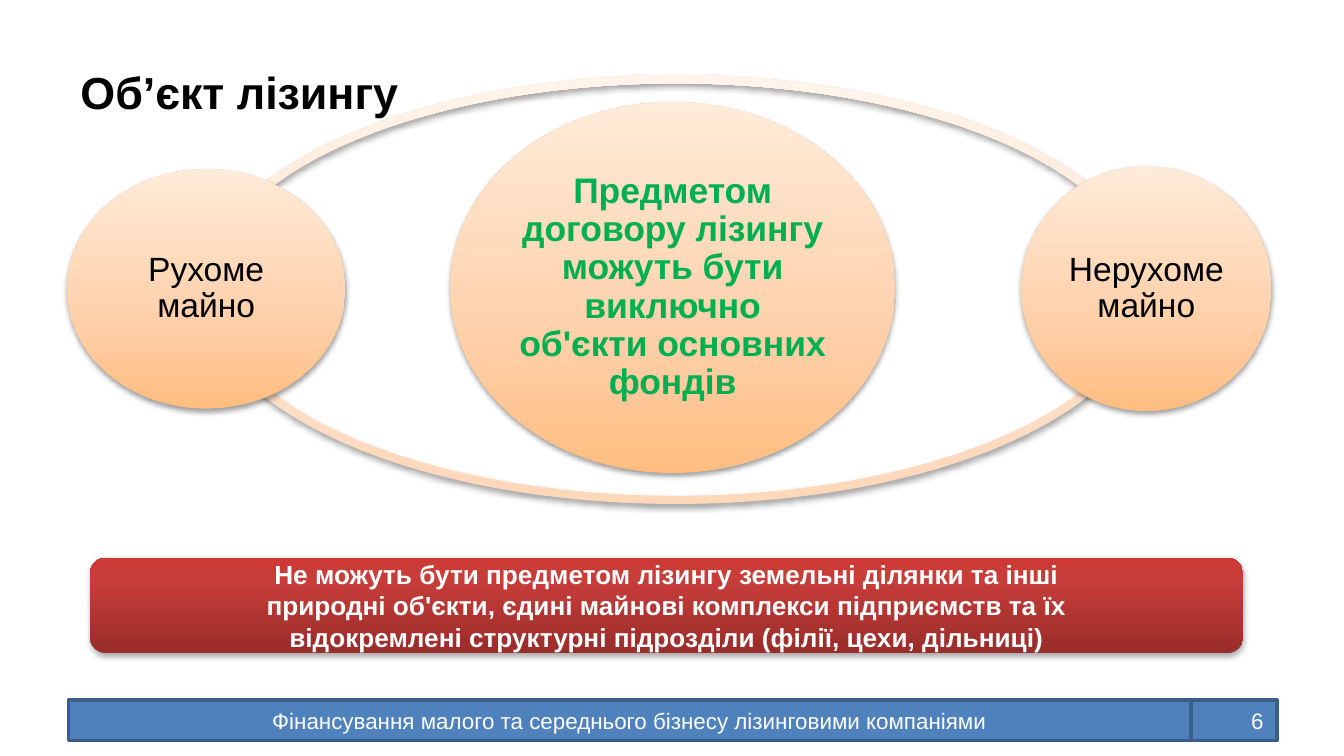
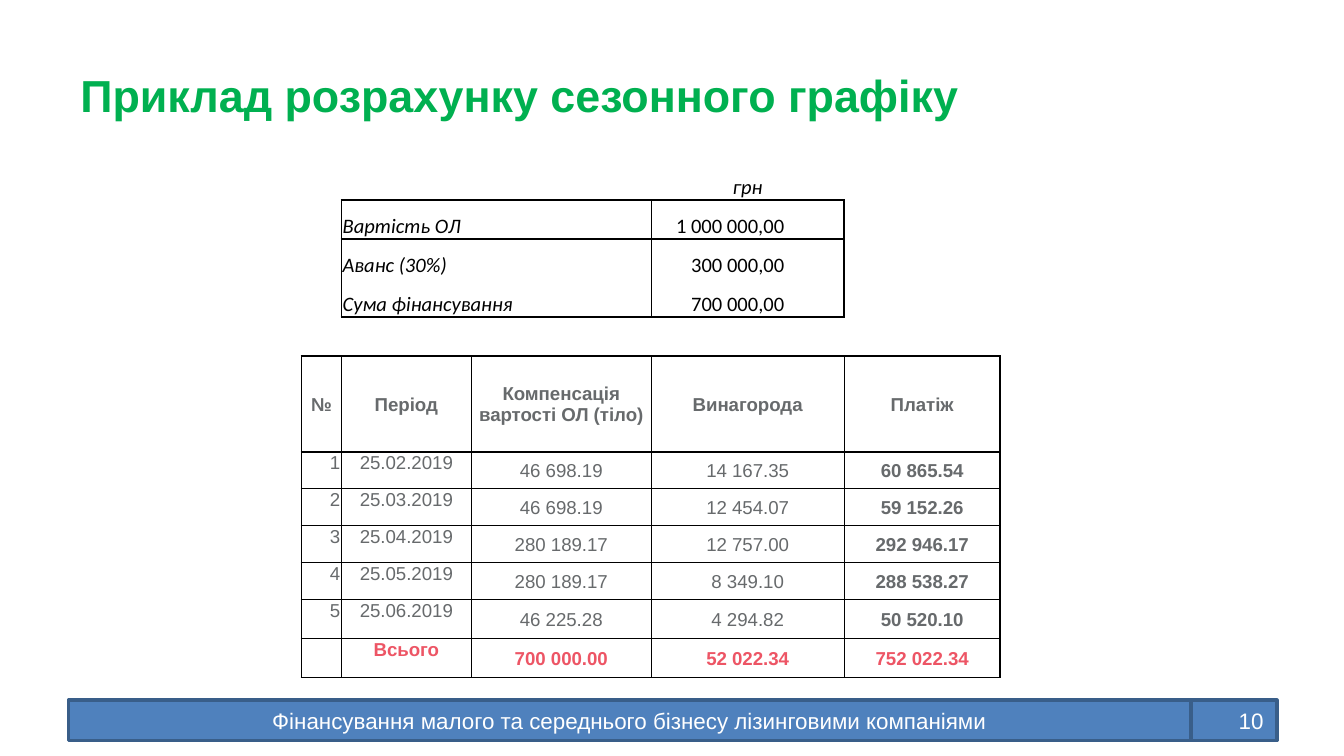
from lxml import etree
from pptx import Presentation
from pptx.dml.color import RGBColor
from pptx.enum import shapes, text
from pptx.oxml.ns import qn
from pptx.util import Pt

# Content
FOOTER = "Фінансування малого та середнього бізнесу лізинговими компаніями"
OBJECT_TITLE = "Об’єкт лізингу"
SCHEDULE_TITLE = "Приклад розрахунку сезонного графіку"
EXCLUSIONS = "\v".join([
    "Не можуть бути предметом лізингу земельні ділянки та інші",
    "природні об'єкти, єдині майнові комплекси підприємств та їх",
    "відокремлені структурні підрозділи (філії, цехи, дільниці)",
])
SUBJECT = "Предметом договору лізингу можуть бути виключно об'єкти основних фондів"
CURRENCY = "грн"
SUMMARY = [
    ("Вартість ОЛ", "1 000 000,00"),
    ("Аванс (30%)", "300 000,00"),
    ("Сума фінансування", "700 000,00"),
]
PAYMENTS = [
    ("№", "Період", "Компенсація вартості ОЛ (тіло)", "Винагорода", "Платіж"),
    ("1", "25.02.2019", "46 698.19", "14 167.35", "60 865.54"),
    ("2", "25.03.2019", "46 698.19", "12 454.07", "59 152.26"),
    ("3", "25.04.2019", "280 189.17", "12 757.00", "292 946.17"),
    ("4", "25.05.2019", "280 189.17", "8 349.10", "288 538.27"),
    ("5", "25.06.2019", "46 225.28", "4 294.82", "50 520.10"),
    ("", "Всього", "700 000.00", "52 022.34", "752 022.34"),
]

# Colours
BLACK = RGBColor(0x00, 0x00, 0x00)
WHITE = RGBColor(0xFF, 0xFF, 0xFF)
GREEN = RGBColor(0x00, 0xB0, 0x50)
GREY = RGBColor(0x67, 0x6A, 0x6C)
RED = RGBColor(0xED, 0x55, 0x65)
BAND = RGBColor(0x4F, 0x81, 0xBD)
BAND_LINE = RGBColor(0x39, 0x5E, 0x89)


def stops(*pairs):
    return [(place, RGBColor.from_string(shade)) for place, shade in pairs]


RING_GRADIENT = stops((0, "FFD7B9"), (35, "FFE1CC"), (100, "FFF4E9"))
CIRCLE_GRADIENT = stops((0, "FFBD80"), (35, "FFCFA8"), (100, "FFEBD9"))
BANNER_GRADIENT = stops((0, "992D2B"), (80, "C93D39"), (100, "CD3A36"))

# Places: left, top, width, height
RING = (108, 40.3, 508.3, 229.7)
RING_HALVES = [(216, 108, 0.019), (108, 216, 0.019)]
CIRCLES = [
    (SUBJECT, (241.2, 54.7, 238.3, 198.7), dict(size=Pt(19), bold=True, color=GREEN)),
    ("Рухоме майно", (36, 90.7, 149, 128.2), dict(size=Pt(18))),
    ("Нерухоме майно", (547.2, 89.3, 133.9, 131)  , dict(size=Pt(18))),
]
BANNER = (48.2, 298.8, 617.8, 51.1)
FOOTER_TOP, FOOTER_HEIGHT = 375.1, 21.6
FOOTER_LEFT, FOOTER_SPLIT, FOOTER_RIGHT = 36.7, 637.9, 684

# Table grid
TABLE_LEFT, TABLE_TOP = 161.5, 86.4
COLUMNS = [21.4, 69.6, 96.4, 103.4, 83.6]
ROWS = [20.9] * 5 + [51.2] + [19.8] * 4 + [20.9] * 2
SUMMARY_TOP, HEADER_ROW, TOTAL_ROW = 1, 5, 11
AMOUNT_INDENT = 32
OUTER, INNER = 1, 0.75
NO_STYLE = "{2D5ABB26-0587-4C30-8999-92F81FD0307C}"

MIDDLE = text.MSO_ANCHOR.MIDDLE
TOP = text.MSO_ANCHOR.TOP
BOTTOM = text.MSO_ANCHOR.BOTTOM
LEFT, CENTER, RIGHT = text.PP_ALIGN.LEFT, text.PP_ALIGN.CENTER, text.PP_ALIGN.RIGHT


# Text and shape helpers
def points(box):
    return [Pt(value) for value in box]


def write(frame, words, align=CENTER, spacing=1.0, color=BLACK, **formats):
    paragraph = frame.paragraphs[0]
    paragraph.text = words
    paragraph.alignment = align
    paragraph.line_spacing = spacing
    for run in paragraph.runs:
        for name, value in {"name": "Arial", **formats}.items():
            setattr(run.font, name, value)
        run.font.color.rgb = color


def write_in_shape(shape, words, inset=None, **formats):
    frame = shape.text_frame
    frame.word_wrap = True
    frame.vertical_anchor = MIDDLE
    if inset is not None:
        for side in ("left", "right", "top", "bottom"):
            setattr(frame, "margin_" + side, Pt(inset))
    write(frame, words, **formats)


def add_plain(slide, kind, box):
    shape = slide.shapes.add_shape(kind, *points(box))
    shape.shadow.inherit = False
    return shape


def add_color(parent, color, opacity=None):
    node = etree.SubElement(parent, qn("a:srgbClr"), val=str(color))
    if opacity:
        etree.SubElement(node, qn("a:alpha"), val=str(opacity * 1000))


def add_glossy(slide, kind, box, gradient, opacity=38, adjustments=()):
    """Shape with a vertical gradient, no line and a soft shadow below."""
    shape = add_plain(slide, kind, box)
    for index, value in enumerate(adjustments):
        shape.adjustments[index] = value
    shape.line.fill.background()
    shape.fill.gradient()
    shape.fill.gradient_angle = 90
    properties = shape._element.spPr
    stop_list = properties.find(".//" + qn("a:gsLst"))
    for old in list(stop_list):
        stop_list.remove(old)
    for place, color in gradient:
        add_color(etree.SubElement(stop_list, qn("a:gs"), pos=str(place * 1000)), color)
    shadow = etree.SubElement(
        properties.find(qn("a:effectLst")), qn("a:outerShdw"), blurRad=str(Pt(3.1)),
        dist=str(Pt(1.6)), dir="5400000", rotWithShape="0")
    add_color(shadow, BLACK, opacity)
    return shape


# Shared parts of a slide
def add_slide(deck, title, title_top, title_color, number):
    slide = deck.slides.add_slide(deck.slide_layouts[6])
    heading = slide.shapes.add_textbox(*points((36, title_top, 562.3, 67.7)))
    write_in_shape(heading, title, align=LEFT, size=Pt(24), bold=True, color=title_color)
    for words, left, right, align in [
        (FOOTER, FOOTER_LEFT, FOOTER_SPLIT, CENTER),
        (number, FOOTER_SPLIT, FOOTER_RIGHT, RIGHT),
    ]:
        band = add_plain(slide, shapes.MSO_SHAPE.RECTANGLE,
                         (left, FOOTER_TOP, right - left, FOOTER_HEIGHT))
        band.fill.solid()
        band.fill.fore_color.rgb = BAND
        band.line.color.rgb = BAND_LINE
        band.line.width = Pt(2)
        write_in_shape(band, words, align=align, size=Pt(12), color=WHITE)
    return slide


# Slide: leasing object
def build_object(deck):
    slide = add_slide(deck, OBJECT_TITLE, 15.1, BLACK, "6")
    for half in RING_HALVES:
        add_glossy(slide, shapes.MSO_SHAPE.BLOCK_ARC, RING, RING_GRADIENT, adjustments=half)
    for words, box, formats in CIRCLES:
        circle = add_glossy(slide, shapes.MSO_SHAPE.OVAL, box, CIRCLE_GRADIENT)
        write_in_shape(circle, words, inset=2, spacing=0.9, **formats)
    banner = add_glossy(slide, shapes.MSO_SHAPE.ROUNDED_RECTANGLE, BANNER,
                        BANNER_GRADIENT, opacity=35)
    write_in_shape(banner, EXCLUSIONS, size=Pt(14), bold=True, color=WHITE)


# Table helpers
def set_borders(cell, **widths):
    properties = cell._tc.get_or_add_tcPr()
    for side in "LRTB":
        if widths.get(side):
            line = etree.SubElement(properties, qn("a:ln" + side), w=str(Pt(widths[side])))
            add_color(etree.SubElement(line, qn("a:solidFill")), BLACK)


def fill_cell(cell, words, anchor, **formats):
    for side, inset in dict(left=0.7, right=0.7, top=0.7, bottom=0).items():
        setattr(cell, "margin_" + side, Pt(inset))
    cell.vertical_anchor = anchor
    write(cell.text_frame, words, **formats)
    if not words:
        cell.text_frame.paragraphs[0]._p.get_or_add_endParaRPr().set("sz", "1000")


def edge(at_edge):
    return OUTER if at_edge else INNER


def fill_summary(table):
    style = dict(size=Pt(11), name="Calibri")
    fill_cell(table.cell(0, 3), CURRENCY, BOTTOM, italic=True, **style)
    last = SUMMARY_TOP + len(SUMMARY) - 1
    for row, (label, amount) in enumerate(SUMMARY, SUMMARY_TOP):
        ends = dict(T=OUTER if row == SUMMARY_TOP else 0, B=OUTER if row == last else 0)
        set_borders(table.cell(row, 1), L=OUTER, R=INNER, **ends)
        set_borders(table.cell(row, 2), R=INNER, **ends)
        set_borders(table.cell(row, 3), L=INNER, R=OUTER, **ends)
        table.cell(row, 1).merge(table.cell(row, 2))
        fill_cell(table.cell(row, 1), label, BOTTOM, align=LEFT, italic=True, **style)
        fill_cell(table.cell(row, 3), amount, BOTTOM, align=RIGHT, **style)
        table.cell(row, 3).margin_right = Pt(AMOUNT_INDENT)


def fill_payments(table):
    last_column = len(COLUMNS) - 1
    for row, values in enumerate(PAYMENTS, HEADER_ROW):
        header, total = row == HEADER_ROW, row == TOTAL_ROW
        for column, words in enumerate(values):
            cell = table.cell(row, column)
            set_borders(cell, L=edge(column == 0), R=edge(column == last_column),
                        T=edge(header or total or row == HEADER_ROW + 1),
                        B=edge(header or total or row == TOTAL_ROW - 1))
            fill_cell(cell, words, MIDDLE if header or column > 1 else TOP,
                      align=RIGHT if column == 0 and not header else CENTER,
                      size=Pt(10), bold=header or total or column == last_column,
                      color=RED if total else GREY)


# Slide: seasonal schedule
def build_schedule(deck):
    slide = add_slide(deck, SCHEDULE_TITLE, 16.6, GREEN, "10")
    frame = slide.shapes.add_table(
        len(ROWS), len(COLUMNS),
        *points((TABLE_LEFT, TABLE_TOP, sum(COLUMNS), sum(ROWS))))
    table = frame.table
    table.first_row = table.horz_banding = False
    table._tbl.tblPr.find(qn("a:tableStyleId")).text = NO_STYLE
    for column, width in zip(table.columns, COLUMNS):
        column.width = Pt(width)
    for row, height in zip(table.rows, ROWS):
        row.height = Pt(height)
    for cell in table.iter_cells():
        fill_cell(cell, "", TOP)
    fill_summary(table)
    fill_payments(table)
    for cell in table.iter_cells():
        cell.fill.background()


def main():
    deck = Presentation()
    deck.slide_width, deck.slide_height = Pt(720), Pt(405)
    build_object(deck)
    build_schedule(deck)
    deck.save("out.pptx")


if __name__ == "__main__":
    main()
